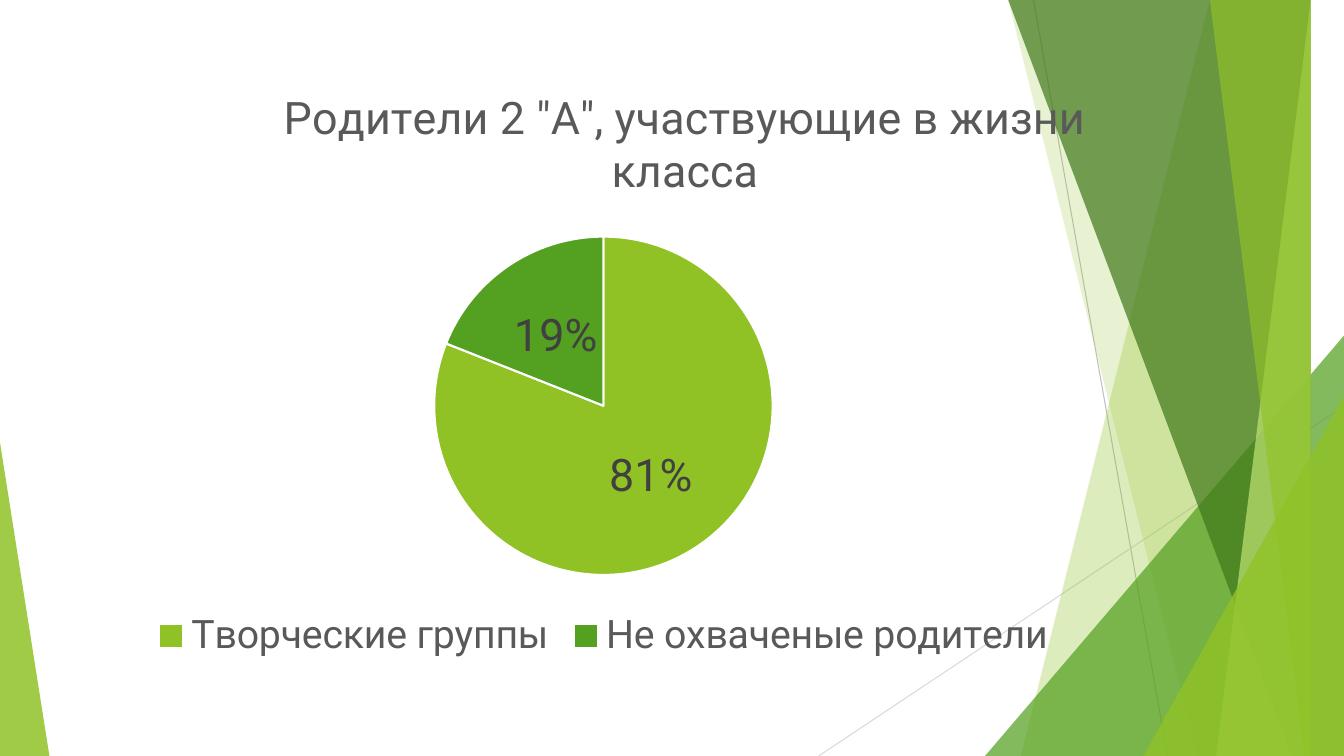
from pptx import Presentation
from pptx.chart.data import CategoryChartData
from pptx.dml.color import RGBColor
from pptx.enum.chart import XL_CHART_TYPE, XL_LABEL_POSITION, XL_LEGEND_POSITION
from pptx.enum.shapes import MSO_CONNECTOR, MSO_SHAPE
from pptx.oxml import parse_xml
from pptx.oxml.ns import nsdecls, qn
from pptx.util import Inches, Pt

TOP, RIGHT, BOTTOM = -0.01, 13.33, 7.5
LIME, GREEN = "90C226", "54A021"


def color(value):
    return RGBColor.from_string(value)


def format_font(font, size, fill, name="Roboto"):
    font.name = name
    font.size = Pt(size)
    font.bold = False
    font.color.rgb = color(fill)


def write_text(frame, text, **style):
    span = frame.paragraphs[0].add_run()
    span.text = text
    format_font(span.font, **style)


def layout_xml(**values):
    items = "".join(f'<c:{tag} val="{value}"/>' for tag, value in values.items())
    return parse_xml(f'<c:layout {nsdecls("c")}><c:manualLayout>{items}</c:manualLayout></c:layout>')


def replace_layout(parent, layout, position):
    for old in parent.findall(qn("c:layout")):
        parent.remove(old)
    parent.insert(position, layout)


class FacetSlide:
    """Draws the facet decoration and the pie chart on one page."""

    text_color = "595959"
    label_color = "404040"

    def __init__(self, deck):
        self.page = deck.slides.add_slide(deck.slide_layouts[6])

    def fill(self, shape, fill, opacity):
        shape.shadow.inherit = False
        shape.line.fill.background()
        shape.fill.solid()
        shape.fill.fore_color.rgb = color(fill)
        tone = shape.fill.fore_color
        tone = shape.element.spPr.find(qn("a:solidFill")).find(qn("a:srgbClr"))
        tone.append(parse_xml(f'<a:alpha {nsdecls("a")} val="{opacity * 1000}"/>'))

    def line(self, start, end, stroke):
        connector = self.page.shapes.add_connector(
            MSO_CONNECTOR.STRAIGHT, *(Inches(value) for value in (*start, *end)))
        connector.line.color.rgb = color(stroke)
        connector.line.width = Pt(0.75)
        connector.element.spPr.append(parse_xml(f'<a:effectLst {nsdecls("a")}/>'))

    def band(self, top_x, bottom_x, fill, opacity):
        builder = self.page.shapes.build_freeform(top_x, TOP, scale=Inches(1))
        builder.add_line_segments([(RIGHT, TOP), (RIGHT, BOTTOM), (bottom_x, BOTTOM)], close=True)
        self.fill(builder.convert_to_shape(), fill, opacity)

    def triangle(self, left, top, width, apex, fill, opacity):
        shape = self.page.shapes.add_shape(
            MSO_SHAPE.ISOSCELES_TRIANGLE, Inches(left), Inches(top),
            Inches(width), Inches(BOTTOM - top))
        shape.adjustments[0] = apex
        self.fill(shape, fill, opacity)

    def pie(self, title, shares, fills, left, top, width, height):
        data = CategoryChartData()
        data.categories = list(shares)
        data.add_series("Series 1", list(shares.values()))
        chart = self.page.shapes.add_chart(
            XL_CHART_TYPE.PIE, Inches(left), Inches(top),
            Inches(width), Inches(height), data).chart
        format_font(chart.font, 10, "000000")

        write_text(chart.chart_title.text_frame, title, size=32, fill=self.text_color)
        chart.chart_title.include_in_layout = False
        replace_layout(chart.chart_title.element,
                       layout_xml(xMode="edge", yMode="edge", x=0.19, y=0.02), 1)

        chart.has_legend = True
        chart.legend.position = XL_LEGEND_POSITION.BOTTOM
        chart.legend.include_in_layout = False
        format_font(chart.legend.font, 28, self.text_color)

        plot = chart.plots[0]
        plot.vary_by_categories = True
        for index, fill in enumerate(fills):
            slice_format = plot.series[0].points[index].format
            slice_format.fill.solid()
            slice_format.fill.fore_color.rgb = color(fill)
            slice_format.line.color.rgb = color("FFFFFF")
            slice_format.line.width = Pt(1.5)
        labels = plot.series[0].data_labels
        labels.show_percentage = True
        labels.show_value = False
        labels.number_format = "0%"
        labels.number_format_is_linked = False
        labels.position = XL_LABEL_POSITION.CENTER
        format_font(labels.font, 32, self.label_color)

        area = chart.element.find(qn("c:chart")).find(qn("c:plotArea"))
        replace_layout(area, layout_xml(layoutTarget="inner", xMode="edge", yMode="edge",
                                        x=0.34, y=0.28, w=0.32, h=0.57), 0)


def main():
    deck = Presentation()
    deck.slide_width, deck.slide_height = Inches(RIGHT), Inches(BOTTOM)
    slide = FacetSlide(deck)
    slide.line((10.25, 0), (11.58, BOTTOM), "BFBFBF")
    slide.line((RIGHT, 4.03), (8.12, BOTTOM), "D9D9D9")
    slide.band(12.28, 10.04, LIME, 30)
    slide.band(10.5, 11.83, LIME, 20)
    slide.triangle(9.77, 3.33, 3.56, 1, GREEN, 72)
    slide.band(10.21, 12.91, "3F7819", 70)
    slide.band(13.03, 11.92, "C0E474", 70)
    slide.band(11.96, 13.18, LIME, 65)
    slide.triangle(11.34, 3.93, 1.99, 1, LIME, 80)
    slide.triangle(0, 4.39, 0.49, 0, LIME, 85)
    slide.pie('Родители 2 "А", участвующие в жизни класса',
              {"Творческие группы": 81, "Не охваченые родители": 19},
              (LIME, GREEN), 0.74, 0.67, 10.49, 5.94)
    deck.save("out.pptx")


if __name__ == "__main__":
    main()
